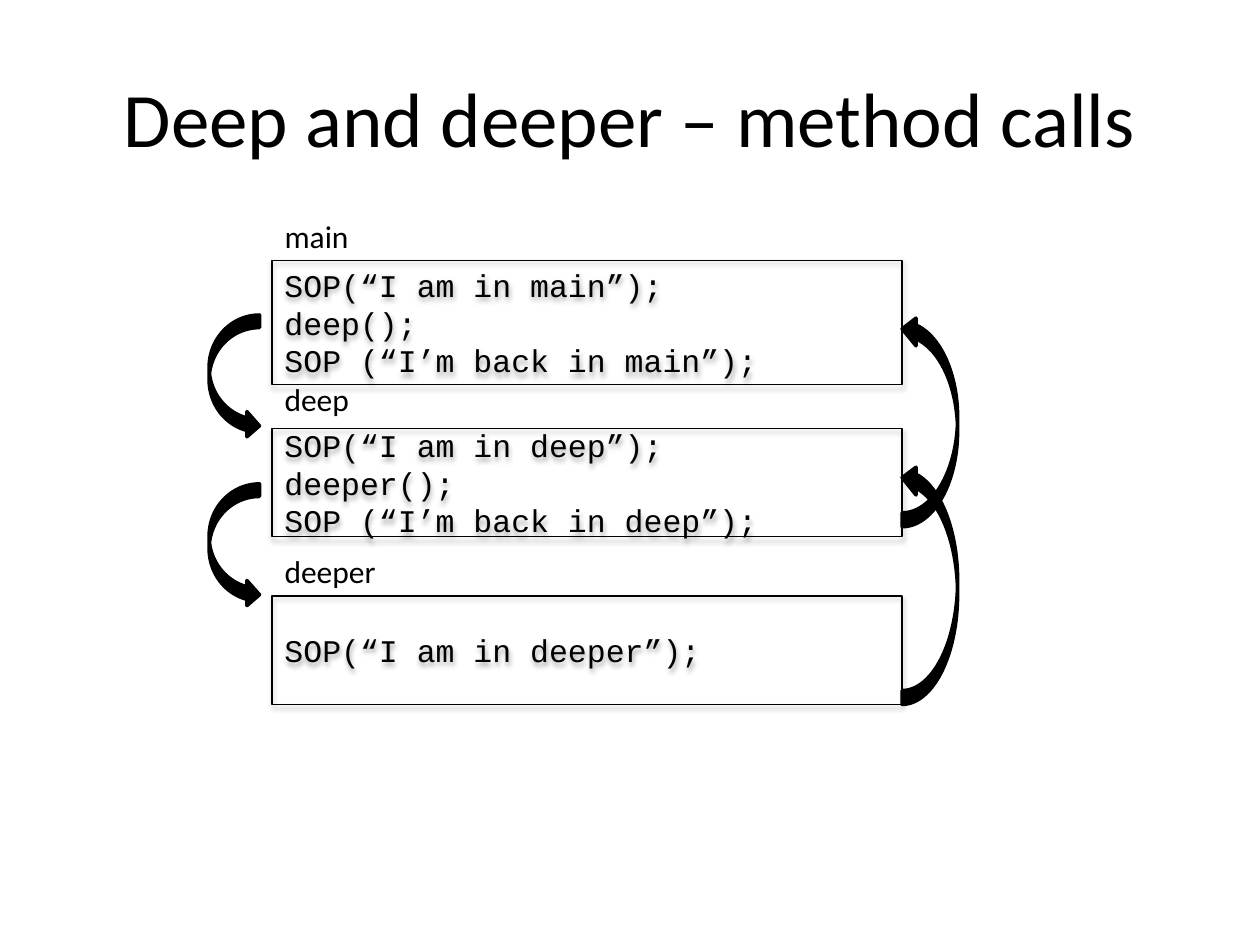
from lxml import etree
from pptx import Presentation
from pptx.dml.color import RGBColor
from pptx.enum.shapes import MSO_SHAPE
from pptx.enum.text import MSO_ANCHOR, PP_ALIGN
from pptx.oxml.ns import qn
from pptx.util import Pt

RECT, ARROW = MSO_SHAPE.RECTANGLE, MSO_SHAPE.CURVED_RIGHT_ARROW
TOP, MIDDLE = MSO_ANCHOR.TOP, MSO_ANCHOR.MIDDLE
LEFT, CENTER = PP_ALIGN.LEFT, PP_ALIGN.CENTER
BLACK = "000000"
BODY, CODE = "Calibri", "Courier New"

TITLE = "Deep and deeper – method calls"
METHODS = [
    ("main", 120.24, 149.04, 70.56,
     ["SOP(“I am in main”);", "deep();", "SOP (“I’m back in main”);"]),
    ("deep", 213.84, 244.8, 61.92,
     ["SOP(“I am in deep”);", "deeper();", "SOP (“I’m back in deep”);"]),
    ("deeper", 311.76, 340.56, 61.92, ["SOP(“I am in deeper”);"]),
]
BOX_X, BOX_W = 155.52, 360
LABEL_W, LABEL_H = 70, 28.8
CALL_X, CALL_W = 119.52, 28.8
RETURN_X, RETURN_W = BOX_X + BOX_W, 31.68
ARROWS = [
    (CALL_X, 180, CALL_W, 70.56, 0),
    (CALL_X, 276.48, CALL_W, 70.56, 0),
    (RETURN_X, 264.96, RETURN_W, 137.52, 180),
    (RETURN_X, 180, RETURN_W, 120.96, 180),
]


def rgb(value):
    return RGBColor.from_string(value)


def write(tf, lines, font, size, anchor=TOP, align=LEFT):
    tf.word_wrap = True
    tf.vertical_anchor = anchor
    for i, line in enumerate(lines):
        p = tf.paragraphs[0] if i == 0 else tf.add_paragraph()
        p.alignment = align
        r = p.add_run()
        r.text = line
        r.font.name, r.font.size = font, Pt(size)
        r.font.color.rgb = rgb(BLACK)


def add_shape(s, kind, x, y, w, h, line_width):
    sp = s.shapes.add_shape(kind, Pt(x), Pt(y), Pt(w), Pt(h))
    sp.shadow.inherit = False
    sp.line.color.rgb = rgb(BLACK)
    sp.line.width = Pt(line_width)
    return sp


def add_shadow(sp):
    effects = sp._element.spPr.find(qn("a:effectLst"))
    shadow = etree.SubElement(
        effects, qn("a:outerShdw"), blurRad=str(Pt(3.1)), dist=str(Pt(1.8)),
        dir="5400000", rotWithShape="0")
    color = etree.SubElement(shadow, qn("a:srgbClr"), val=BLACK)
    etree.SubElement(color, qn("a:alpha"), val="35000")


def main():
    prs = Presentation()
    prs.slide_width, prs.slide_height = Pt(720), Pt(540)
    s = prs.slides.add_slide(prs.slide_layouts[5])

    title = s.shapes.title
    title.left, title.top = Pt(36), Pt(21.6)
    title.width, title.height = Pt(648), Pt(90)
    write(title.text_frame, [TITLE], BODY, 44, MIDDLE, CENTER)

    for name, label_y, box_y, box_h, code in METHODS:
        box = add_shape(s, RECT, BOX_X, box_y, BOX_W, box_h, 0.75)
        box.fill.background()
        add_shadow(box)
        write(box.text_frame, code, CODE, 18, MIDDLE)
        label = s.shapes.add_textbox(Pt(BOX_X), Pt(label_y), Pt(LABEL_W), Pt(LABEL_H))
        write(label.text_frame, [name], BODY, 18)

    for x, y, w, h, rotation in ARROWS:
        arrow = add_shape(s, ARROW, x, y, w, h, 2)
        arrow.fill.solid()
        arrow.fill.fore_color.rgb = rgb(BLACK)
        arrow.rotation = rotation

    prs.save("out.pptx")


if __name__ == "__main__":
    main()
